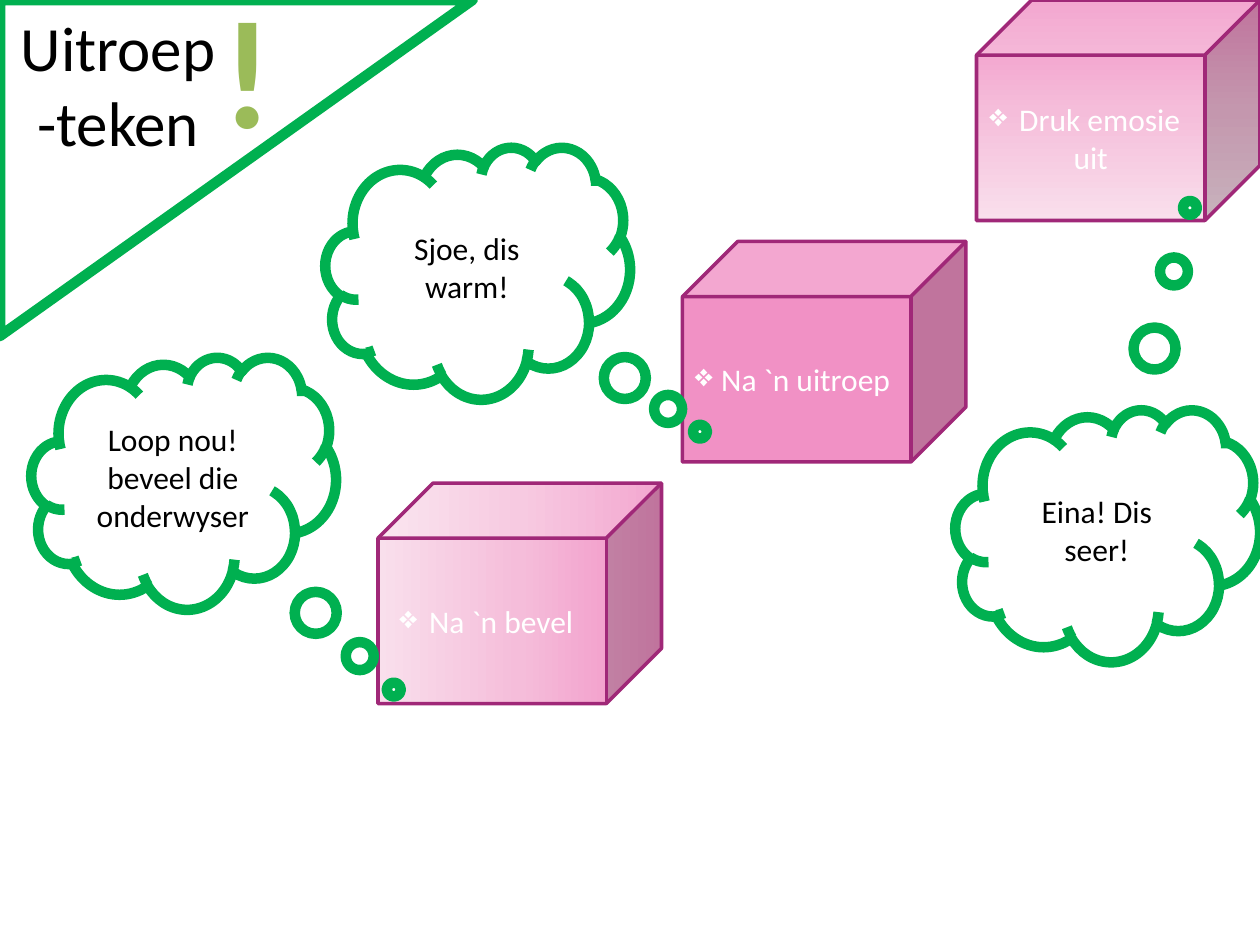
from copy import deepcopy

from lxml import etree
from pptx import Presentation
from pptx.dml.color import RGBColor
from pptx.enum.shapes import MSO_SHAPE
from pptx.enum.text import MSO_ANCHOR, MSO_AUTO_SIZE, PP_ALIGN
from pptx.oxml.ns import qn
from pptx.util import Inches, Pt

STRIPE = MSO_SHAPE.DIAGONAL_STRIPE
CUBE = MSO_SHAPE.CUBE
CLOUD = MSO_SHAPE.CLOUD_CALLOUT
MIDDLE = MSO_ANCHOR.MIDDLE
CENTER = PP_ALIGN.CENTER
GROW = MSO_AUTO_SIZE.SHAPE_TO_FIT_TEXT

WHITE = RGBColor(0xFF, 0xFF, 0xFF)
BLACK = RGBColor(0, 0, 0)
GREEN = RGBColor(0x00, 0xB0, 0x50)
OLIVE = RGBColor(0x9B, 0xBB, 0x59)
PLUM = RGBColor(0xA0, 0x28, 0x78)
PINK = RGBColor(0xF1, 0x91, 0xC5)
ROSE = RGBColor(0xF5, 0xBD, 0xDA)
BLUSH = RGBColor(0xF9, 0xDF, 0xEC)

FONT = "Calibri"
COLS, ROWS = 120, 90  # twelve grid cells to the inch


def cells(*counts):
    return [Inches(n / 12) for n in counts]


def write(frame, text, size, color, bold=False):
    para = frame.paragraphs[0]
    para.alignment = CENTER
    run = para.add_run()
    run.text = text
    run.font.name = FONT
    run.font.size = Pt(size)
    run.font.bold = bold
    run.font.color.rgb = color
    return para


def add_form(slide, kind, box, edge, width, fill=WHITE):
    form = slide.shapes.add_shape(kind, *cells(*box))
    form.shadow.inherit = False
    form.fill.solid()
    form.fill.fore_color.rgb = fill
    form.line.color.rgb = edge
    form.line.width = Pt(width)
    form.text_frame.word_wrap = True
    form.text_frame.vertical_anchor = MIDDLE
    return form


def blend(form, angle):
    """Fill with a three-stop pink gradient at a counter-clockwise angle."""
    form.fill.gradient()
    form.fill.gradient_angle = angle
    stops = form._element.spPr.find(".//" + qn("a:gsLst"))
    stops.insert(1, deepcopy(stops[0]))
    shades = zip(form.fill.gradient_stops, (PINK, ROSE, BLUSH), (0, 0.5, 1))
    for stop, color, place in shades:
        stop.color.rgb = color
        stop.position = place


def add_cube(slide, left, top, text, angle=None):
    cube = add_form(slide, CUBE, (left, top, 27, 21), PLUM, 2, PINK)
    if angle is not None:
        blend(cube, angle)
    para = write(cube.text_frame, text, 18, WHITE)
    mark = etree.SubElement(para._p.get_or_add_pPr(), qn("a:buChar"))
    mark.set("char", "❖")


def add_cloud(slide, left, top, text, tail):
    cloud = add_form(slide, CLOUD, (left, top, 29, 24), GREEN, 6)
    for i, share in enumerate(tail):
        cloud.adjustments[i] = share
    write(cloud.text_frame, text, 18, BLACK)


def add_title(slide):
    stripe = add_form(slide, STRIPE, (0, 0, 45, 32), GREEN, 6)
    stripe.adjustments[0] = 0
    write(stripe.text_frame, "Uitroep-teken", 36, BLACK)

    sign = slide.shapes.add_textbox(*cells(20, -3, 7.2, 19))
    sign.text_frame.word_wrap = False
    sign.text_frame.auto_size = GROW
    write(sign.text_frame, "!", 88, OLIVE, bold=True)


def main():
    deck = Presentation()
    deck.slide_width, deck.slide_height = cells(COLS, ROWS)
    slide = deck.slides.add_slide(deck.slide_layouts[6])

    add_title(slide)
    add_cube(slide, 93, 0, "Druk emosie uit", 270)
    add_cube(slide, 65, 23, "Na `n uitroep")
    add_cube(slide, 36, 46, "Na `n bevel", 180)
    add_cloud(slide, 3, 34, "Loop nou! beveel die onderwyser", (0.69, 0.82))
    add_cloud(slide, 31, 14, "Sjoe, dis warm!", (0.73, 0.63))
    add_cloud(slide, 91, 39, "Eina! Dis seer!", (0.27, -1.3))

    deck.save("out.pptx")


if __name__ == "__main__":
    main()
